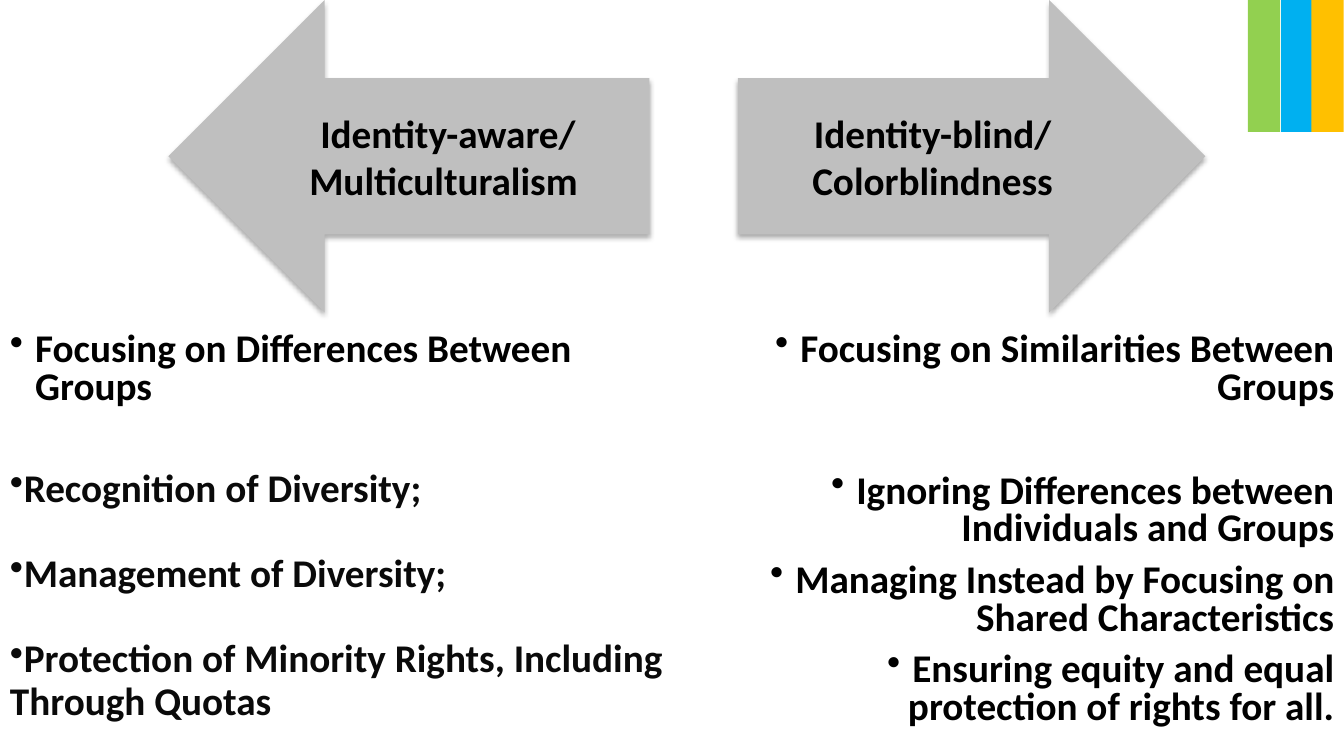
from dataclasses import dataclass

import lxml.etree
import pptx
import pptx.dml.color
import pptx.enum.shapes
import pptx.enum.text
import pptx.oxml
import pptx.oxml.ns
import pptx.util

Pt = pptx.util.Pt
RGBColor = pptx.dml.color.RGBColor
Shape = pptx.enum.shapes.MSO_SHAPE
Align = pptx.enum.text.PP_ALIGN
Anchor = pptx.enum.text.MSO_ANCHOR
qn = pptx.oxml.ns.qn

BLACK = RGBColor(0x00, 0x00, 0x00)
NEAR_BLACK = RGBColor(0x0A, 0x0A, 0x0A)
GREY = RGBColor(0xBF, 0xBF, 0xBF)
GREEN = RGBColor(0x92, 0xD0, 0x50)
BLUE = RGBColor(0x00, 0xB0, 0xF0)
AMBER = RGBColor(0xFF, 0xC0, 0x00)

SHADOW = (
    '<a:effectLst xmlns:a="http://schemas.openxmlformats.org/drawingml/2006/main">'
    '<a:outerShdw blurRad="44450" dist="27940" dir="5400000" rotWithShape="0">'
    '<a:srgbClr val="000000"><a:alpha val="32000"/></a:srgbClr>'
    '</a:outerShdw></a:effectLst>'
)


@dataclass(frozen=True)
class Arrow:
    kind: int
    left: float
    width: float
    lines: tuple[str, ...]


@dataclass(frozen=True)
class Point:
    text: str
    before: float = 0
    spacing: float = 0.8
    indent: float = 18
    color: RGBColor = BLACK


@dataclass(frozen=True)
class Column:
    left: float
    width: float
    align: int
    points: tuple[Point, ...]


@dataclass(frozen=True)
class Stripe:
    left: float
    color: RGBColor


ARROWS = (
    Arrow(Shape.RIGHT_ARROW, 527, 334, ("Identity-blind/", "Colorblindness")),
    Arrow(Shape.LEFT_ARROW, 120.3, 343.5, ("Identity-aware/", "Multiculturalism ")),
)
COLUMNS = (
    Column(0, 494, Align.LEFT, (
        Point("Focusing on Differences Between Groups"),
        Point("Recognition of Diversity;", 43.5, 0.9, 0, NEAR_BLACK),
        Point("Management of Diversity;", 30.5, 0.9, 0, NEAR_BLACK),
        Point("Protection of Minority Rights, Including Through Quotas",
              30.5, 0.9, 0, NEAR_BLACK),
    )),
    Column(525.6, 434.4, Align.RIGHT, (
        Point("Focusing on Similarities Between Groups"),
        Point("Ignoring Differences between Individuals and Groups", 47.3),
        Point("Managing Instead by Focusing on Shared Characteristics", 10),
        Point("Ensuring equity and equal protection of rights for all.", 10),
    )),
)
STRIPES = (Stripe(891.4, GREEN), Stripe(915.1, BLUE), Stripe(936.7, AMBER))


def set_font(paragraph, color: RGBColor) -> None:
    font = paragraph.font
    font.name = "Calibri"
    font.size = Pt(28)
    font.bold = True
    font.color.rgb = color


def add_block(slide, kind: int, left: float, width: float, height: float,
              color: RGBColor):
    block = slide.shapes.add_shape(kind, Pt(left), Pt(0), Pt(width), Pt(height))
    block.shadow.inherit = False
    block.fill.solid()
    block.fill.fore_color.rgb = color
    block.line.fill.background()
    return block


def add_arrow(slide, arrow: Arrow) -> None:
    block = add_block(slide, arrow.kind, arrow.left, arrow.width, 223.2, GREY)
    properties = block._element.spPr
    properties.replace(properties.find(qn("a:effectLst")), pptx.oxml.parse_xml(SHADOW))
    frame = block.text_frame
    frame.vertical_anchor = Anchor.MIDDLE
    for index, line in enumerate(arrow.lines):
        paragraph = frame.add_paragraph() if index else frame.paragraphs[0]
        paragraph.text = line
        paragraph.alignment = Align.CENTER
        set_font(paragraph, BLACK)


def add_column(slide, column: Column) -> None:
    box = slide.shapes.add_textbox(Pt(column.left), Pt(234), Pt(column.width), Pt(306))
    frame = box.text_frame
    frame.word_wrap = True
    for index, point in enumerate(column.points):
        paragraph = frame.add_paragraph() if index else frame.paragraphs[0]
        paragraph.text = point.text
        paragraph.alignment = column.align
        paragraph.line_spacing = point.spacing
        if point.before:
            paragraph.space_before = Pt(point.before)
        properties = paragraph._p.get_or_add_pPr()
        properties.set("marL", str(Pt(point.indent)))
        properties.set("indent", str(Pt(-point.indent)))
        lxml.etree.SubElement(properties, qn("a:buChar")).set("char", "•")
        set_font(paragraph, point.color)


def main() -> None:
    deck = pptx.Presentation()
    deck.slide_width, deck.slide_height = Pt(960), Pt(540)
    slide = deck.slides.add_slide(deck.slide_layouts[6])

    # Opposing approaches and what each one means
    for arrow in ARROWS:
        add_arrow(slide, arrow)
    for column in COLUMNS:
        add_column(slide, column)

    # Corner stripes
    for stripe in STRIPES:
        add_block(slide, Shape.RECTANGLE, stripe.left, 23, 94.3, stripe.color)

    deck.save("out.pptx")


if __name__ == "__main__":
    main()
